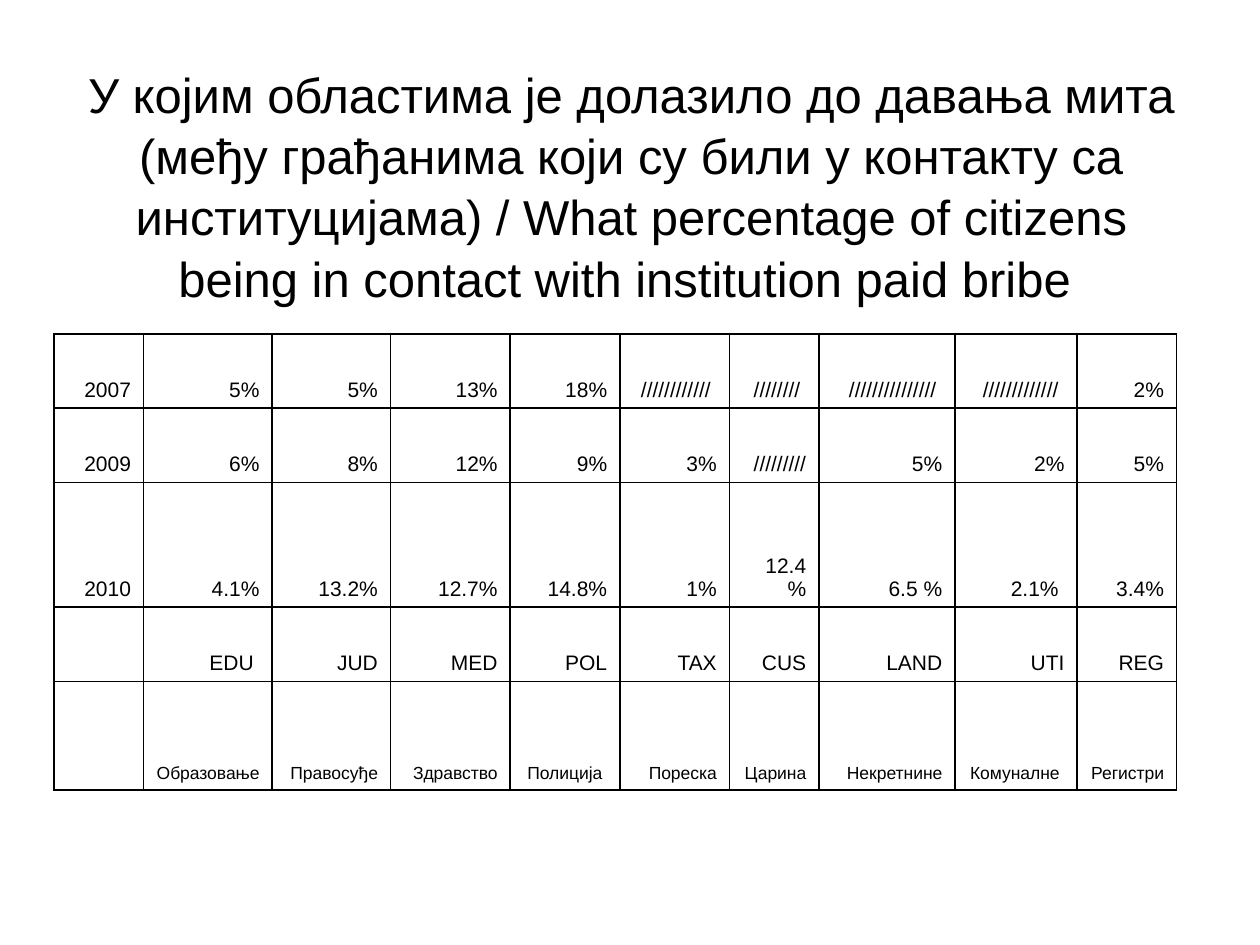
from lxml.etree import SubElement
from pptx import Presentation
from pptx.dml.color import RGBColor
from pptx.enum.text import MSO_ANCHOR, MSO_AUTO_SIZE, PP_ALIGN
from pptx.oxml.ns import qn
from pptx.util import Inches, Pt

COLORS = {"text": "000000", "border": "000000"}
FONT = "Arial"
TITLE = (
    "У којим областима је долазило до давања мита (међу грађанима који су били "
    "у контакту са институцијама) / What percentage of citizens being in contact "
    "with institution paid bribe "
)
BRIBE_RATES = [
    ["2007", "5%", "5%", "13%", "18%", "//////////// ", "//////// ",
     "/////////////// ", "///////////// ", "2%"],
    ["2009", "6%", "8%", "12%", "9%", "3%", " /////////", "5%", "2%", "5%"],
    ["2010", "4.1%", "13.2%", "12.7%", "14.8%", "1%", "12.4 %", "6.5 %", "2.1% ", "3.4%"],
    ["", "EDU ", "JUD", "MED", "POL", "TAX", "CUS", "LAND", "UTI", "REG"],
    ["", "Образовање", "Правосуђе", "Здравство", "Полиција ", "Пореска", "Царина ",
     "Некретнине", "Комуналне ", "Регистри"],
]
COLUMN_WIDTHS = [0.71, 1.02, 0.94, 0.95, 0.87, 0.87, 0.71, 1.08, 0.97, 0.79]
ROW_HEIGHTS = [0.59, 0.59, 0.99, 0.59, 0.86]
ROW_SIZES = [12, 12, 12, 12, 10]


def add_text(paragraph, text, size, align):
    paragraph.alignment = align
    run = paragraph.add_run()
    run.text = text
    run.font.size = Pt(size)
    run.font.name = FONT
    run.font.color.rgb = RGBColor.from_string(COLORS["text"])


def add_borders(cell):
    properties = cell._tc.get_or_add_tcPr()
    for side in ("a:lnL", "a:lnR", "a:lnT", "a:lnB"):
        line = SubElement(properties, qn(side), w=str(Pt(1)))
        fill = SubElement(line, qn("a:solidFill"))
        SubElement(fill, qn("a:srgbClr"), val=COLORS["border"])


prs = Presentation()
prs.slide_width, prs.slide_height = Inches(10), Inches(7.5)
slide = prs.slides.add_slide(prs.slide_layouts[5])

title = slide.shapes.title
title.left, title.top = Inches(0.51), Inches(0.84)
title.width, title.height = Inches(9), Inches(1.25)
title.text_frame.auto_size = MSO_AUTO_SIZE.NONE
title.text_frame.vertical_anchor = MSO_ANCHOR.MIDDLE
heading = title.text_frame.paragraphs[0]
heading.line_spacing = 1.04
add_text(heading, TITLE, 28, PP_ALIGN.CENTER)

rates = slide.shapes.add_table(
    len(ROW_HEIGHTS), len(COLUMN_WIDTHS), Inches(0.43), Inches(2.65),
    Inches(sum(COLUMN_WIDTHS)), Inches(sum(ROW_HEIGHTS)),
).table
rates.first_row = rates.horz_banding = False
for column, width in zip(rates.columns, COLUMN_WIDTHS):
    column.width = Inches(width)

for row, height, size, values in zip(rates.rows, ROW_HEIGHTS, ROW_SIZES, BRIBE_RATES):
    row.height = Inches(height)
    for cell, value in zip(row.cells, values):
        add_borders(cell)
        cell.fill.background()
        cell.vertical_anchor = MSO_ANCHOR.BOTTOM
        if value:
            add_text(cell.text_frame.paragraphs[0], value, size, PP_ALIGN.RIGHT)

prs.save("out.pptx")
